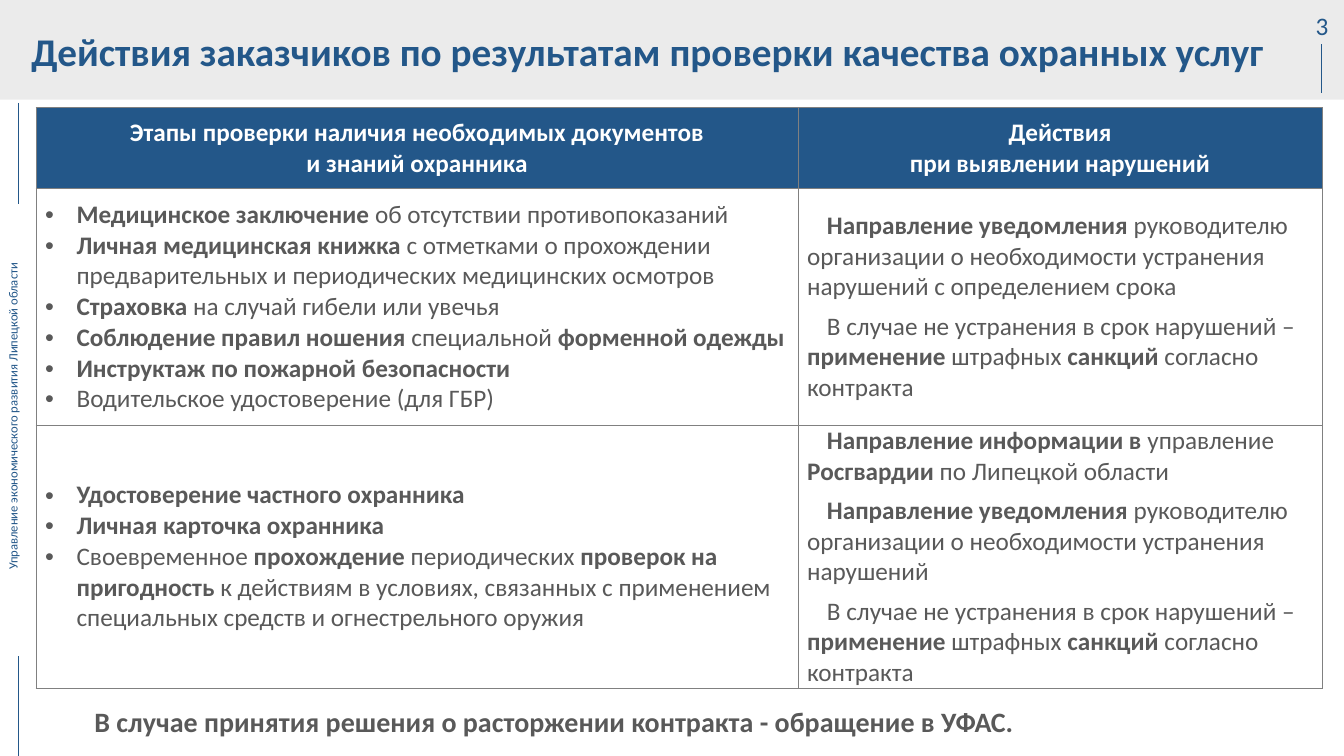
from dataclasses import dataclass
from lxml import etree
from pptx import Presentation
from pptx.dml.color import RGBColor
from pptx.enum.shapes import MSO_CONNECTOR, MSO_SHAPE
from pptx.enum.text import MSO_ANCHOR, MSO_AUTO_SIZE, PP_ALIGN
from pptx.oxml.ns import qn
from pptx.util import Cm, Pt

LINE = MSO_CONNECTOR.STRAIGHT
RECT = MSO_SHAPE.RECTANGLE
TOP, MIDDLE = MSO_ANCHOR.TOP, MSO_ANCHOR.MIDDLE
FIXED = MSO_AUTO_SIZE.NONE
LEFT, CENTER, RIGHT = PP_ALIGN.LEFT, PP_ALIGN.CENTER, PP_ALIGN.RIGHT


@dataclass(frozen=True)
class Theme:
    font: str = "Calibri"
    blue: str = "235789"
    gray: str = "595959"
    white: str = "FFFFFF"
    band: str = "C7C7C7"
    edge: str = "808080"
    title: int = 28
    foot: int = 20
    text: int = 18
    side: int = 9


THEME = Theme()

TITLE = "**Действия заказчиков по результатам проверки качества охранных услуг**"
NUMBER = "3"
SIDE = "Управление экономического развития Липецкой области"
FOOT = "**В случае принятия решения о расторжении контракта - обращение в УФАС.**"
FINE = "В случае не устранения в срок нарушений – **применение **штрафных **санкций** согласно контракта"
HEADS = [
    ["**Этапы проверки наличия необходимых документов**", "**и знаний охранника**"],
    ["**Действия**", "**при выявлении нарушений**"],
]
STAGES = [
    ([
        "**Медицинское заключение **об отсутствии противопоказаний",
        "**Личная медицинская книжка **с отметками о прохождении предварительных и периодических медицинских осмотров",
        "**Страховка **на случай гибели или увечья",
        "**Соблюдение правил ношения **специальной** форменной одежды**",
        "**Инструктаж по пожарной безопасности**",
        "Водительское удостоверение (для ГБР)",
    ], [
        "**Направление уведомления **руководителю организации о необходимости устранения нарушений с определением срока",
        FINE,
    ]),
    ([
        "**Удостоверение частного охранника**",
        "**Личная карточка охранника**",
        "Своевременное **прохождение** периодических **проверок на пригодность **к действиям в условиях, связанных с применением специальных средств и огнестрельного оружия",
    ], [
        "**Направление информации в **управление **Росгвардии** по Липецкой области",
        "**Направление уведомления **руководителю организации о необходимости устранения нарушений",
        FINE,
    ]),
]

WIDTH, HEIGHT = 33.87, 19.05
BAND = (0, 0, WIDTH, 2.51)
RULES = [(33.3, 1.12, 2.34), (0.46, 2.59, 5.13), (0.46, 16.54, HEIGHT)]
COLS = [19.2, 13.21]
ROWS = [2.03, 5.97, 6.12]
GRID = (0.91, 2.72, sum(COLS), sum(ROWS))


def color(code):
    return RGBColor.from_string(code)


def place(box):
    return [Cm(n) for n in box]


def write(frame, lines, size=THEME.text, ink=THEME.gray, align=LEFT,
          margin=0, indent=0, bullet=None, gap=0):
    for i, line in enumerate(lines):
        para = frame.paragraphs[0] if i == 0 else frame.add_paragraph()
        para.alignment = align
        para.space_before = Pt(gap if i else 0)
        props = para._p.get_or_add_pPr()
        props.set("marL", str(Cm(margin)))
        props.set("indent", str(Cm(indent)))
        if bullet:
            etree.SubElement(props, qn("a:buFont")).set("typeface", "Arial")
            etree.SubElement(props, qn("a:buChar")).set("char", bullet)
        for j, part in enumerate(line.split("**")):
            if part:
                run = para.add_run()
                run.text = part
                run.font.name = THEME.font
                run.font.size = Pt(size)
                run.font.bold = j % 2 == 1
                run.font.color.rgb = color(ink)


def label(slide, box, text, wrap=True, turn=None, **style):
    frame = slide.shapes.add_textbox(*place(box)).text_frame
    frame.word_wrap = wrap
    frame.vertical_anchor = TOP
    if turn:
        frame._txBody.bodyPr.set("vert", turn)
    write(frame, [text], **style)


def draw_band(slide):
    band = slide.shapes.add_shape(RECT, *place(BAND))
    band.shadow.inherit = False
    band.line.fill.background()
    band.fill.solid()
    band.fill.fore_color.rgb = color(THEME.band)
    tint = band._element.spPr.find(qn("a:solidFill"))[0]
    etree.SubElement(tint, qn("a:alpha")).set("val", "35000")


def draw_rule(slide, x, top, end):
    rule = slide.shapes.add_connector(LINE, *place((x, top, x, end)))
    rule.line.color.rgb = color(THEME.blue)
    rule.line.width = Pt(1)
    etree.SubElement(rule._element.spPr, qn("a:effectLst"))


def fill_cell(cell, lines, back=None, **style):
    props = cell._tc.get_or_add_tcPr()
    for side in "LRTB":
        edge = etree.SubElement(props, qn("a:ln" + side), w=str(Pt(0.75)))
        fill = etree.SubElement(edge, qn("a:solidFill"))
        etree.SubElement(fill, qn("a:srgbClr")).set("val", THEME.edge)
    if back:
        cell.fill.solid()
        cell.fill.fore_color.rgb = color(back)
    else:
        cell.fill.background()
    cell.vertical_anchor = MIDDLE
    cell.margin_left = cell.margin_right = Cm(0.23)
    cell.margin_top = cell.margin_bottom = 0
    write(cell.text_frame, lines, **style)


def draw_table(slide):
    size = (len(ROWS), len(COLS))
    table = slide.shapes.add_table(*size, *place(GRID)).table
    table.horz_banding = False
    for col, width in zip(table.columns, COLS):
        col.width = Cm(width)
    for row, height in zip(table.rows, ROWS):
        row.height = Cm(height)
    for c, lines in enumerate(HEADS):
        fill_cell(table.cell(0, c), lines, THEME.blue, ink=THEME.white, align=CENTER)
    for r, (checks, steps) in enumerate(STAGES, 1):
        fill_cell(table.cell(r, 0), checks, margin=0.79, indent=-0.79, bullet="•")
        fill_cell(table.cell(r, 1), steps, indent=0.5, gap=6)


def set_title(slide):
    title = slide.shapes.title
    title.left, title.top, title.width, title.height = place((0.46, 0.18, 33.25, 2.18))
    frame = title.text_frame
    frame.auto_size = FIXED
    frame.vertical_anchor = MIDDLE
    frame.margin_left = frame.margin_right = Cm(0.33)
    frame.margin_top = frame.margin_bottom = Cm(0.18)
    write(frame, [TITLE], size=THEME.title, ink=THEME.blue)
    slide.shapes._spTree.append(title._element)


def main():
    deck = Presentation()
    deck.slide_width, deck.slide_height = place((WIDTH, HEIGHT))
    slide = deck.slides.add_slide(deck.slide_layouts[5])
    draw_band(slide)
    for rule in RULES:
        draw_rule(slide, *rule)
    label(slide, (0, 6.53, 0.89, 8.08), SIDE, wrap=False, turn="vert270",
          size=THEME.side, ink=THEME.blue)
    draw_table(slide)
    set_title(slide)
    label(slide, (25.83, 0.13, 7.9, 1.02), NUMBER, ink=THEME.blue, align=RIGHT)
    label(slide, (2.13, 17.63, 23.98, 1.12), FOOT, wrap=False, size=THEME.foot)
    deck.save("out.pptx")


if __name__ == "__main__":
    main()
